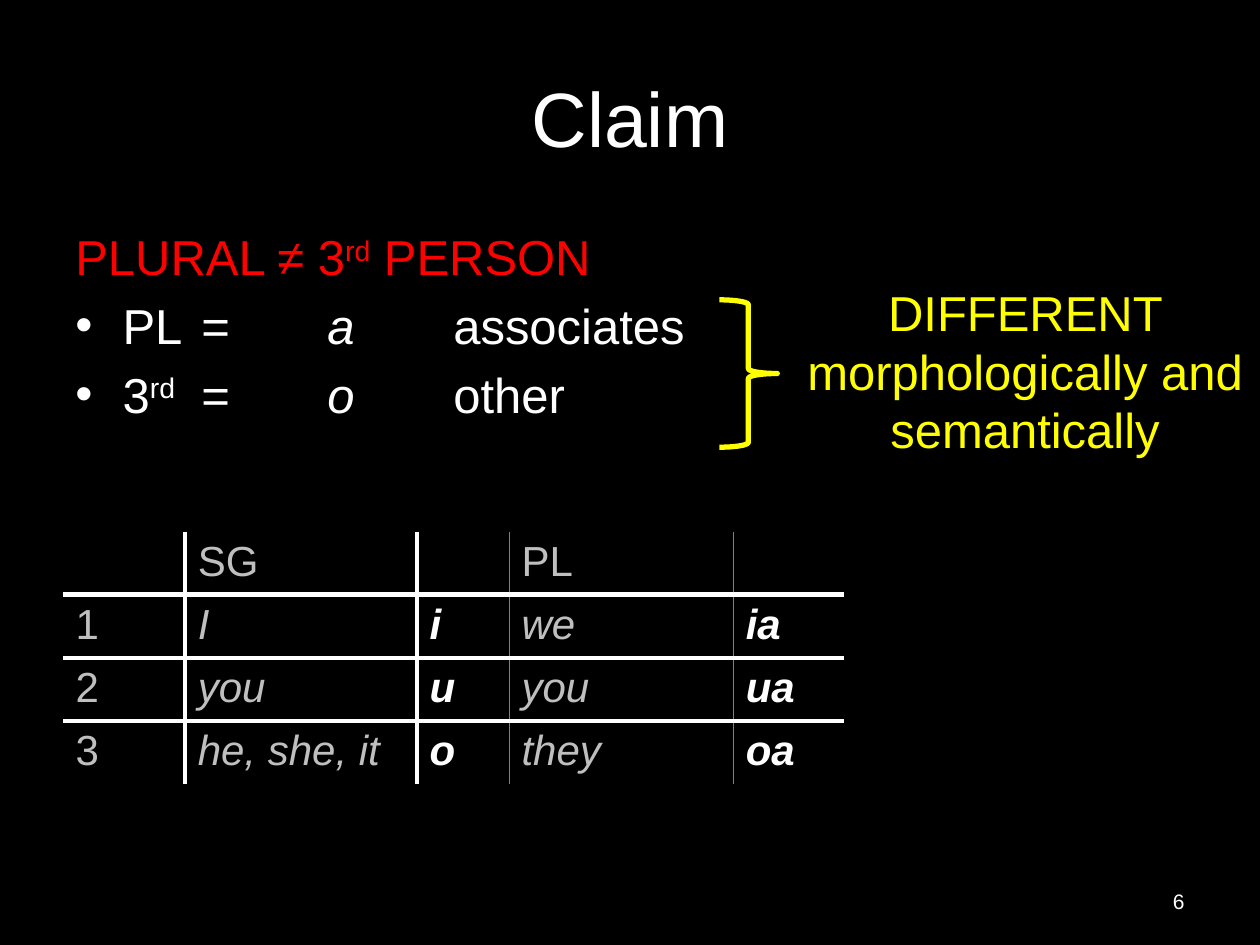
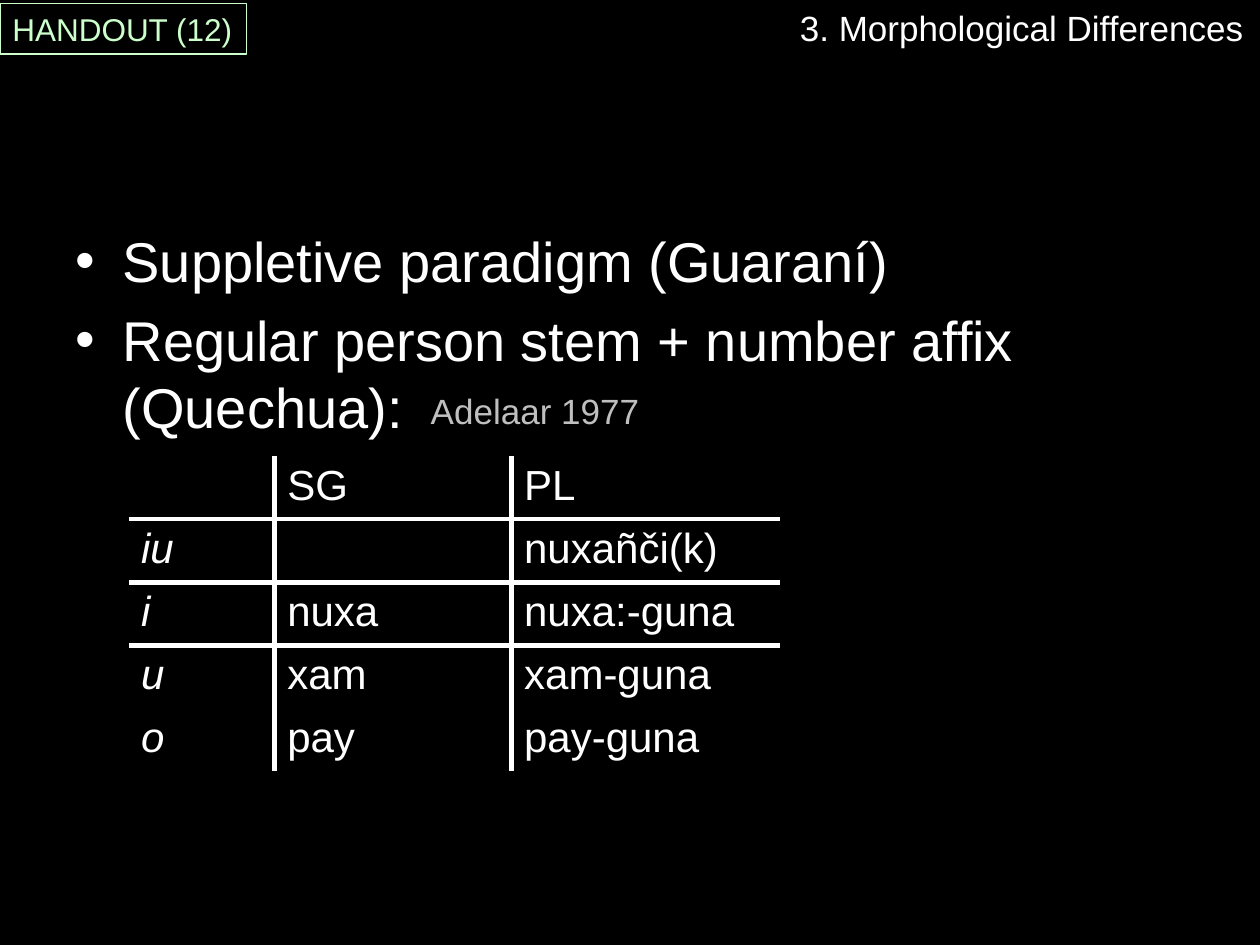
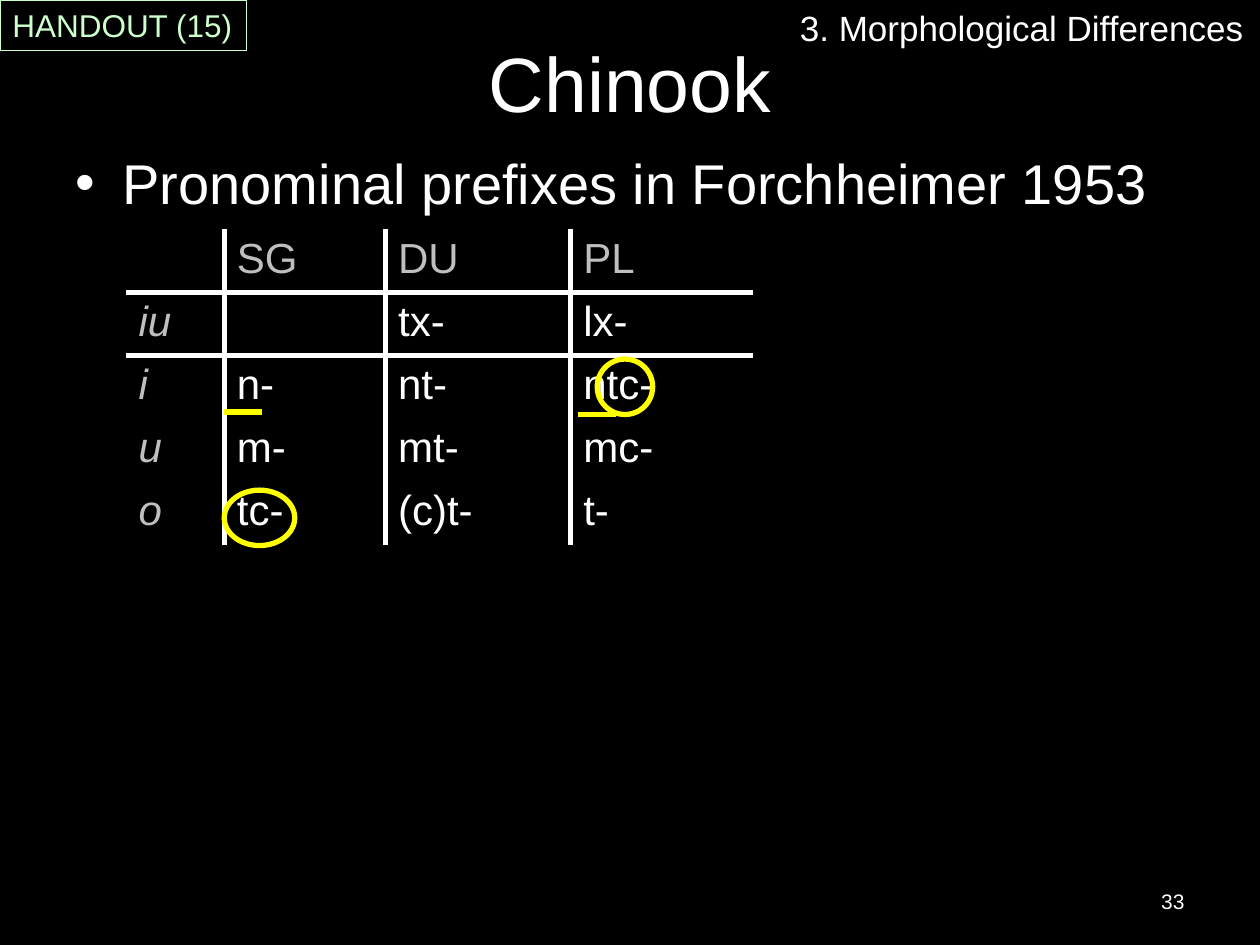
from lxml import etree
from pptx import Presentation
from pptx.dml.color import RGBColor
from pptx.enum.shapes import MSO_CONNECTOR, MSO_SHAPE
from pptx.enum.text import MSO_ANCHOR, PP_ALIGN
from pptx.oxml.ns import qn
from pptx.util import Inches, Pt

LEFT, CENTER, RIGHT = PP_ALIGN.LEFT, PP_ALIGN.CENTER, PP_ALIGN.RIGHT
TOP, MIDDLE = MSO_ANCHOR.TOP, MSO_ANCHOR.MIDDLE
RECT, OVAL, BRACE = MSO_SHAPE.RECTANGLE, MSO_SHAPE.OVAL, MSO_SHAPE.RIGHT_BRACE
STRAIGHT = MSO_CONNECTOR.STRAIGHT
TITLE_ONLY, BLANK = 5, 6

FONT = "Arial"
BLACK, WHITE, GREY, RULE_GREY = "000000", "FFFFFF", "BFBFBF", "808080"
RED, YELLOW, MINT = "FF0000", "FFFF00", "CCFFCC"
NO_TABLE_STYLE = "{2D5ABB26-0587-4C30-8999-92F81FD0307C}"
ROW_HEIGHT = 0.472
SECTION = "3. Morphological Differences"
SUP, ITALIC = {"sup": True}, {"italic": True}
THICK, THIN = (WHITE, 3), (RULE_GREY, 0.5)

PLAIN_GREY = {"color": GREY}
ITALIC_GREY = {"color": GREY, "italic": True}
BOLD_ITALIC = {"bold": True, "italic": True}

CLAIM_HEAD = [("PLURAL ≠ 3", {}), ("rd", SUP), (" PERSON", {})]
CLAIM_BULLETS = [
    [("PL \t= \t", {}), ("a\t", ITALIC), ("associates", {})],
    [("3", {}), ("rd", SUP), (" \t=\t", {}), ("o\t", ITALIC), ("other", {})],
]
PARADIGM_BULLETS = [
    "Suppletive paradigm (Guaraní)",
    "Regular person stem + number affix (Quechua):",
]

CLAIM_TABLE = {
    "at": (0.5, 4.22),
    "widths": [0.97, 1.84, 0.73, 1.78, 0.88],
    "styles": [PLAIN_GREY, ITALIC_GREY, BOLD_ITALIC, ITALIC_GREY, BOLD_ITALIC],
    "header": PLAIN_GREY,
    "row_rules": {0: THICK, 1: THICK},
    "col_rules": {0: THICK, 1: THICK, 2: THIN, 3: THIN},
    "rows": [
        ["", "SG", "", "PL", ""],
        ["1", "I", "i", "we", "ia"],
        ["2", "you", "u", "you", "ua"],
        ["3", "he, she, it", "o", "they", "oa"],
    ],
}
QUECHUA_TABLE = {
    "at": (1.02, 3.62),
    "widths": [1.16, 1.88, 2.13],
    "styles": [ITALIC, {}, {}],
    "header": {},
    "row_rules": {0: THICK, 1: THICK},
    "col_rules": {0: THICK, 1: THICK},
    "rows": [
        ["", "SG", "PL"],
        ["iu", "", "nuxañči(k)"],
        ["i", "nuxa", "nuxa:-guna"],
        ["u", "xam", "xam-guna"],
        ["o", "pay", "pay-guna"],
    ],
}
CHINOOK_TABLE = {
    "at": (1, 1.82),
    "widths": [0.78, 1.28, 1.47, 1.45],
    "styles": [ITALIC_GREY, {}, {}, {}],
    "header": PLAIN_GREY,
    "row_rules": {0: THICK},
    "col_rules": {0: THICK, 1: THICK},
    "rows": [
        ["", "SG", "DU", "PL"],
        ["iu", "", "tx-", "lx-"],
        ["i", "n-", "nt-", "ntc-"],
        ["u", "m-", "mt-", "mc-"],
        ["o", "tc-", "(c)t-", "t-"],
    ],
}
CHINOOK_CIRCLES = [(1.78, 3.89, 0.56, 0.44), (4.74, 2.85, 0.44, 0.44)]
CHINOOK_UNDERLINES = [(4.59, 3.29), (1.78, 3.27)]
UNDERLINE_LENGTH = 0.3


def rgb(color):
    return RGBColor.from_string(color)


def inches(values):
    return [Inches(v) for v in values]


def add_runs(p, content, size, color=WHITE):
    runs = [(content, {})] if isinstance(content, str) else content
    for text, style in runs:
        r = p.add_run()
        r.text = text
        r.font.name = FONT
        r.font.size = Pt(size)
        r.font.color.rgb = rgb(style.get("color", color))
        r.font.bold = style.get("bold", False)
        r.font.italic = style.get("italic", False)
        if style.get("sup"):
            r._r.get_or_add_rPr().set("baseline", "30000")


def add_text(slide, at, content, size, color=WHITE, align=LEFT, anchor=TOP, wrap=True):
    tf = slide.shapes.add_textbox(*inches(at)).text_frame
    tf.word_wrap = wrap
    tf.vertical_anchor = anchor
    p = tf.paragraphs[0]
    p.alignment = align
    add_runs(p, content, size, color)
    return tf


def new_slide(prs, title=None, at=None):
    slide = prs.slides.add_slide(prs.slide_layouts[BLANK if title is None else TITLE_ONLY])
    if title is not None:
        sp = slide.shapes.title
        sp.left, sp.top, sp.width, sp.height = inches(at)
        tf = sp.text_frame
        tf.vertical_anchor = MIDDLE
        p = tf.paragraphs[0]
        p.alignment = CENTER
        add_runs(p, title, 44)
    return slide


def format_body(p, bullet=True):
    pPr = p._p.get_or_add_pPr()
    before = etree.SubElement(pPr, qn("a:spcBef"))
    etree.SubElement(before, qn("a:spcPct"), val="20000")
    if bullet:
        pPr.set("marL", str(Inches(0.375)))
        pPr.set("indent", str(-Inches(0.375)))
        etree.SubElement(pPr, qn("a:buFont"), typeface=FONT)
        etree.SubElement(pPr, qn("a:buChar"), char="•")
        tabs = etree.SubElement(pPr, qn("a:tabLst"))
        for stop in (1, 2, 3):
            etree.SubElement(tabs, qn("a:tab"), pos=str(Inches(stop)), algn="l")


def add_body(slide, at, bullets, size, head=None):
    tf = slide.shapes.add_textbox(*inches(at)).text_frame
    tf.word_wrap = True
    p = tf.paragraphs[0]
    if head:
        format_body(p, bullet=False)
        add_runs(p, head, size, RED)
    for i, bullet in enumerate(bullets):
        if i or head:
            p = tf.add_paragraph()
        format_body(p)
        add_runs(p, bullet, size)


def add_border(cell, side, rule):
    tcPr = cell._tc.get_or_add_tcPr()
    if rule:
        color, width = rule
        ln = etree.SubElement(tcPr, qn("a:ln" + side), w=str(Pt(width)))
        fill = etree.SubElement(ln, qn("a:solidFill"))
        etree.SubElement(fill, qn("a:srgbClr"), val=color)


def add_grid(slide, data):
    rows, widths = data["rows"], data["widths"]
    size = (sum(widths), ROW_HEIGHT * len(rows))
    table = slide.shapes.add_table(len(rows), len(widths), *inches(data["at"] + size)).table
    table.first_row = table.horz_banding = False
    table._tbl.tblPr.find(qn("a:tableStyleId")).text = NO_TABLE_STYLE
    for col, width in zip(table.columns, widths):
        col.width = Inches(width)
    row_rules, col_rules = data["row_rules"], data["col_rules"]
    for i, row in enumerate(rows):
        table.rows[i].height = Inches(ROW_HEIGHT)
        for j, text in enumerate(row):
            cell = table.cell(i, j)
            if text:
                style = data["styles"][j] if i else data["header"]
                add_runs(cell.text_frame.paragraphs[0], [(text, style)], 24)
            add_border(cell, "L", col_rules.get(j - 1))
            add_border(cell, "R", col_rules.get(j))
            add_border(cell, "T", row_rules.get(i - 1))
            add_border(cell, "B", row_rules.get(i))
            cell.fill.background()


def add_outline(slide, kind, at, color=YELLOW, width=3):
    sp = slide.shapes.add_shape(kind, *inches(at))
    sp.shadow.inherit = False
    sp.fill.background()
    sp.line.color.rgb = rgb(color)
    sp.line.width = Pt(width)
    return sp


def add_underline(slide, x, y):
    line = slide.shapes.add_connector(STRAIGHT, *inches((x, y, x + UNDERLINE_LENGTH, y)))
    line.line.color.rgb = rgb(YELLOW)
    line.line.width = Pt(3)
    etree.SubElement(line._element.spPr, qn("a:effectLst"))


def add_section(slide, handout, top):
    add_text(slide, (6.25, 0, 3.75, 0.44), SECTION, 20, wrap=False)
    tf = add_outline(slide, RECT, (0, top, 1.96, 0.4), MINT, 0.75).text_frame
    tf.word_wrap = False
    p = tf.paragraphs[0]
    p.alignment = LEFT
    add_runs(p, handout, 18, MINT)


def add_number(slide, number):
    add_text(slide, (7.17, 6.95, 2.33, 0.4), number, 12, align=RIGHT, anchor=MIDDLE)


def claim_slide(prs):
    slide = new_slide(prs, "Claim", (0.5, 0.3, 9, 1.25))
    add_body(slide, (0.5, 1.75, 9, 4.95), CLAIM_BULLETS, 28, CLAIM_HEAD)
    add_number(slide, "6")
    add_grid(slide, CLAIM_TABLE)
    add_text(slide, (6.27, 2.19, 3.73, 1.51), "DIFFERENT morphologically and semantically",
             28, YELLOW, CENTER)
    add_outline(slide, BRACE, (5.71, 2.38, 0.46, 1.17))


def paradigm_slide(prs):
    slide = new_slide(prs)
    add_body(slide, (0.5, 1.75, 9, 4.95), PARADIGM_BULLETS, 32)
    add_grid(slide, QUECHUA_TABLE)
    add_text(slide, (3.32, 3.04, 1.88, 0.44), "Adelaar 1977", 20, GREY, wrap=False)
    add_section(slide, "HANDOUT (12)", 0.03)


def chinook_slide(prs):
    slide = new_slide(prs, "Chinook", (0.5, 0, 9, 1.29))
    add_body(slide, (0.5, 1.13, 9, 6.37), ["Pronominal prefixes in Forchheimer 1953"], 32)
    add_number(slide, "33")
    add_grid(slide, CHINOOK_TABLE)
    for at in CHINOOK_CIRCLES:
        add_outline(slide, OVAL, at)
    for x, y in CHINOOK_UNDERLINES:
        add_underline(slide, x, y)
    add_section(slide, "HANDOUT (15)", 0)


def main():
    prs = Presentation()
    prs.slide_width, prs.slide_height = inches((10, 7.5))
    fill = prs.slide_master.background.fill
    fill.solid()
    fill.fore_color.rgb = rgb(BLACK)
    claim_slide(prs)
    paradigm_slide(prs)
    chinook_slide(prs)
    prs.save("out.pptx")


if __name__ == "__main__":
    main()
